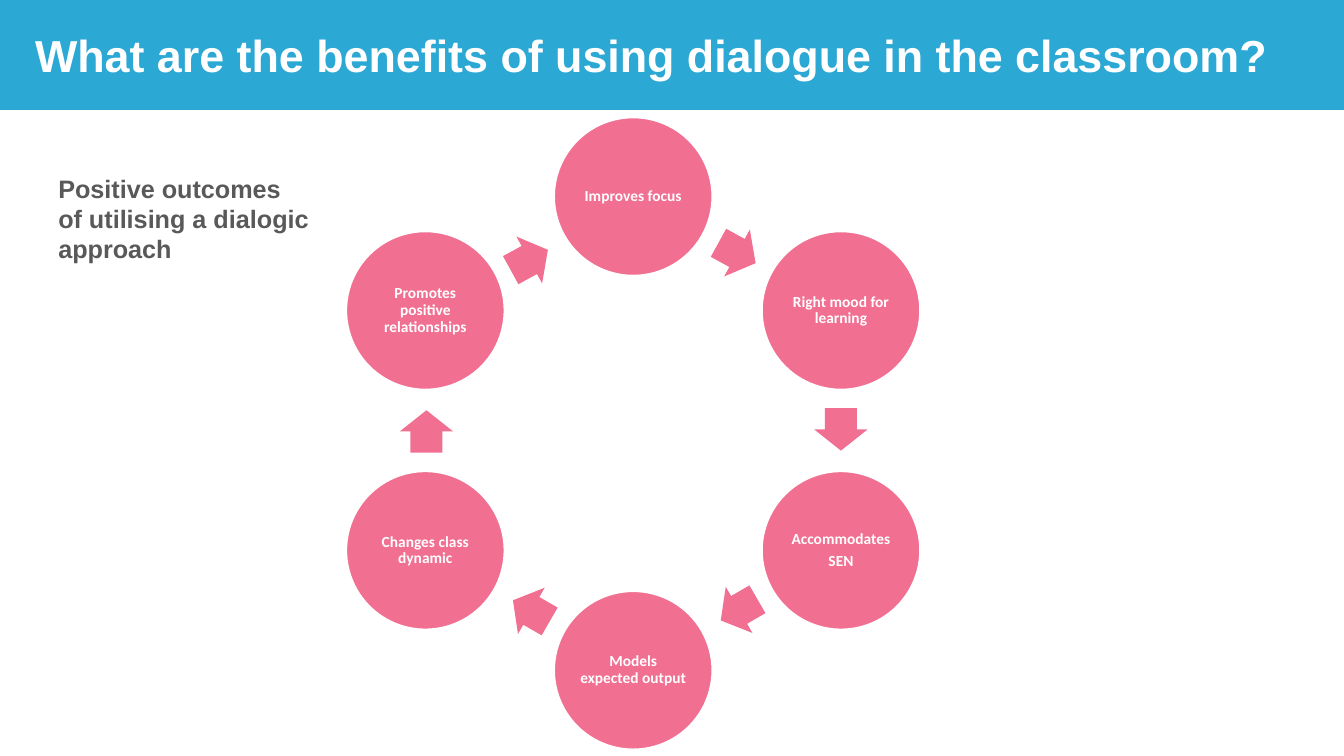
from dataclasses import dataclass
from math import atan2, cos, degrees, radians, sin

from pptx import Presentation
from pptx.dml.color import RGBColor
from pptx.enum.shapes import MSO_SHAPE
from pptx.enum.text import MSO_ANCHOR, PP_ALIGN
from pptx.util import Inches, Pt


@dataclass(frozen=True)
class Theme:
    band: RGBColor = RGBColor(0x2C, 0xA8, 0xD4)
    pink: RGBColor = RGBColor(0xF1, 0x6F, 0x91)
    white: RGBColor = RGBColor(0xFF, 0xFF, 0xFF)
    grey: RGBColor = RGBColor(0x59, 0x59, 0x59)
    heading_font: str = "Arial"
    cycle_font: str = "Calibri"
    title_size: int = 32
    lead_size: int = 18
    cycle_size: int = 11


class SlideBuilder:
    def __init__(self, slide, theme):
        self.slide = slide
        self.theme = theme

    def shape(self, kind, x, y, w, h, fill, outline=None):
        sp = self.slide.shapes.add_shape(
            kind, Inches(x), Inches(y), Inches(w), Inches(h))
        sp.shadow.inherit = False
        sp.fill.solid()
        sp.fill.fore_color.rgb = fill
        if outline is None:
            sp.line.fill.background()
        else:
            sp.line.color.rgb = outline
            sp.line.width = Pt(2)
        return sp

    def run(self, p, text, font, size, color):
        r = p.add_run()
        r.text = text
        r.font.name = font
        r.font.size = Pt(size)
        r.font.bold = True
        r.font.color.rgb = color

    def text(self, x, y, w, h, text, size, color, anchor=MSO_ANCHOR.TOP):
        sp = self.slide.shapes.add_textbox(
            Inches(x), Inches(y), Inches(w), Inches(h))
        tf = sp.text_frame
        tf.word_wrap = True
        tf.vertical_anchor = anchor
        self.run(tf.paragraphs[0], text, self.theme.heading_font, size, color)

    def circle(self, cx, cy, size, lines):
        t = self.theme
        sp = self.shape(MSO_SHAPE.OVAL, cx - size / 2, cy - size / 2,
                        size, size, t.pink, t.white)
        tf = sp.text_frame
        tf.word_wrap = True
        tf.vertical_anchor = MSO_ANCHOR.MIDDLE
        tf.margin_left = tf.margin_right = Inches(0.02)
        tf.margin_top = tf.margin_bottom = Inches(0.02)
        for i, line in enumerate(lines):
            p = tf.add_paragraph() if i else tf.paragraphs[0]
            p.alignment = PP_ALIGN.CENTER
            p.line_spacing = 0.9
            p.space_after = Pt(4)
            self.run(p, line, t.cycle_font, t.cycle_size, t.white)

    def arrow(self, cx, cy, angle):
        w, h = 0.42, 0.53
        sp = self.shape(MSO_SHAPE.RIGHT_ARROW, cx - w / 2, cy - h / 2,
                        w, h, self.theme.pink)
        sp.adjustments[0] = 0.6
        sp.adjustments[1] = 0.5
        sp.rotation = angle % 360


# Cycle: lines of each stage, and the centre of the arrow that leaves it
STAGES = [
    (["Improves focus"], (7.31, 2.51)),
    (["Right mood for learning"], (8.34, 4.26)),
    (["Accommodates", "SEN"], (7.33, 6.05)),
    (["Models expected output"], (5.27, 6.06)),
    (["Changes class dynamic"], (4.23, 4.28)),
    (["Promotes positive relationships"], (5.25, 2.58)),
]
CENTRE_X, CENTRE_Y, RADIUS = 6.28, 4.27, 2.38
CIRCLE_SIZE = 1.58
TOP_DROP = 0.06  # the top circle sits slightly lower, clear of the band


def stage_centre(i):
    angle = radians(360 / len(STAGES) * i - 90)
    drop = TOP_DROP if i == 0 else 0
    return (CENTRE_X + RADIUS * cos(angle),
            CENTRE_Y + RADIUS * sin(angle) + drop)


def main():
    prs = Presentation()
    prs.slide_width, prs.slide_height = Inches(13.33), Inches(7.5)
    theme = Theme()
    s = SlideBuilder(prs.slides.add_slide(prs.slide_layouts[6]), theme)

    # Title band
    s.shape(MSO_SHAPE.RECTANGLE, 0, 0, 13.33, 1.09, theme.band)
    s.text(0.25, 0.12, 12.93, 0.85,
           "What are the benefits of using dialogue in the classroom?",
           theme.title_size, theme.white, MSO_ANCHOR.MIDDLE)

    # Cycle of outcomes
    centres = [stage_centre(i) for i in range(len(STAGES))]
    for i, (lines, arrow_centre) in enumerate(STAGES):
        x, y = centres[i]
        next_x, next_y = centres[(i + 1) % len(centres)]
        s.circle(x, y, CIRCLE_SIZE, lines)
        s.arrow(*arrow_centre, degrees(atan2(next_y - y, next_x - x)))

    # Lead text
    s.text(0.48, 1.67, 2.7, 1.01,
           "Positive outcomes of utilising a dialogic approach",
           theme.lead_size, theme.grey)

    prs.save("out.pptx")


if __name__ == "__main__":
    main()
